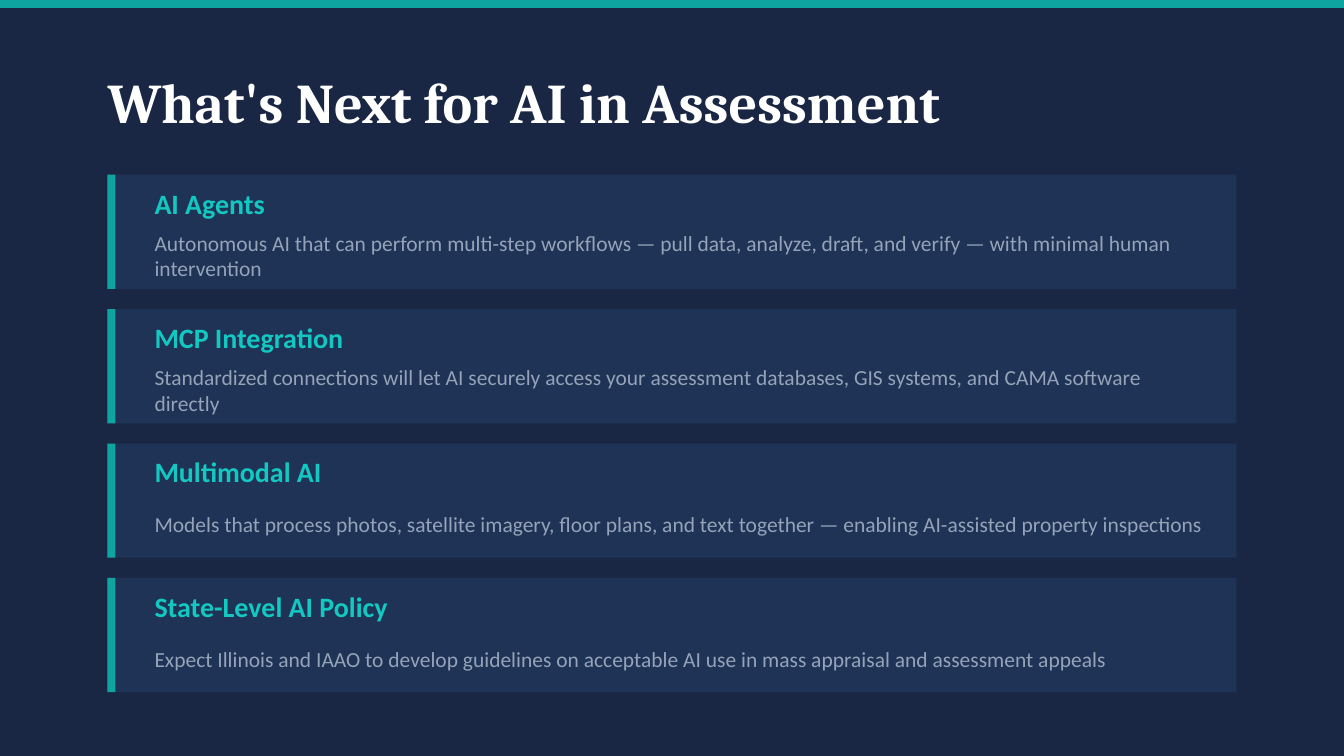
from dataclasses import dataclass

import pptx
import pptx.dml.color
import pptx.enum.shapes
import pptx.enum.text
import pptx.util

Pt = pptx.util.Pt

COLORS = {
    "background": "1A2744",
    "accent": "0EA5A0",
    "card": "1E3355",
    "title": "FFFFFF",
    "heading": "14C8C2",
    "description": "94A3B8",
}

FORMATS = {
    "title": {"name": "Cambria", "size": Pt(30), "bold": True},
    "heading": {"name": "Calibri", "size": Pt(15), "bold": True},
    "description": {"name": "Calibri", "size": Pt(11.5), "bold": False},
}

# Layout in points
SLIDE_WIDTH, SLIDE_HEIGHT = 720, 405
MARGIN = 57.6
CONTENT_WIDTH = SLIDE_WIDTH - 2 * MARGIN
CARDS_TOP, CARD_HEIGHT, CARD_PITCH = 93.6, 61.2, 72
ACCENT_THICKNESS = 4.32
TEXT_LEFT, TEXT_WIDTH = 82.8, 561.6


@dataclass
class Box:
    left: float
    top: float
    width: float
    height: float

    def lengths(self) -> tuple:
        return Pt(self.left), Pt(self.top), Pt(self.width), Pt(self.height)


@dataclass
class Trend:
    heading: str
    description: str


TRENDS = [
    Trend("AI Agents",
          "Autonomous AI that can perform multi-step workflows — pull data, "
          "analyze, draft, and verify — with minimal human intervention"),
    Trend("MCP Integration",
          "Standardized connections will let AI securely access your assessment "
          "databases, GIS systems, and CAMA software directly"),
    Trend("Multimodal AI",
          "Models that process photos, satellite imagery, floor plans, and text "
          "together — enabling AI-assisted property inspections"),
    Trend("State-Level AI Policy",
          "Expect Illinois and IAAO to develop guidelines on acceptable AI use "
          "in mass appraisal and assessment appeals"),
]


def color(role: str) -> pptx.dml.color.RGBColor:
    return pptx.dml.color.RGBColor.from_string(COLORS[role])


def draw_block(slide, box: Box, role: str) -> None:
    block = slide.shapes.add_shape(
        pptx.enum.shapes.MSO_SHAPE.RECTANGLE, *box.lengths())
    block.shadow.inherit = False
    block.fill.solid()
    block.fill.fore_color.rgb = color(role)
    block.line.fill.background()


def write_text(frame, text: str, role: str) -> None:
    frame_format = {
        "word_wrap": True,
        "auto_size": pptx.enum.text.MSO_AUTO_SIZE.NONE,
        "vertical_anchor": pptx.enum.text.MSO_ANCHOR.MIDDLE,
        "margin_left": 0,
        "margin_top": 0,
        "margin_right": 0,
        "margin_bottom": 0,
    }
    for attribute, value in frame_format.items():
        setattr(frame, attribute, value)
    paragraph = frame.paragraphs[0]
    paragraph.alignment = pptx.enum.text.PP_ALIGN.LEFT
    run = paragraph.add_run()
    run.text = text
    for attribute, value in FORMATS[role].items():
        setattr(run.font, attribute, value)
    run.font.color.rgb = color(role)


def draw_label(slide, box: Box, text: str, role: str) -> None:
    label = slide.shapes.add_textbox(*box.lengths())
    write_text(label.text_frame, text, role)


def draw_title(slide, box: Box, text: str) -> None:
    title = slide.shapes.title
    title.left, title.top, title.width, title.height = box.lengths()
    write_text(title.text_frame, text, "title")


def draw_trend(slide, trend: Trend, top: float) -> None:
    draw_block(slide, Box(MARGIN, top, CONTENT_WIDTH, CARD_HEIGHT), "card")
    draw_block(slide, Box(MARGIN, top, ACCENT_THICKNESS, CARD_HEIGHT), "accent")
    draw_label(slide, Box(TEXT_LEFT, top + 3.6, TEXT_WIDTH, 23.04),
               trend.heading, "heading")
    draw_label(slide, Box(TEXT_LEFT, top + 28.8, TEXT_WIDTH, 28.8),
               trend.description, "description")


def main() -> None:
    presentation = pptx.Presentation()
    presentation.slide_width = Pt(SLIDE_WIDTH)
    presentation.slide_height = Pt(SLIDE_HEIGHT)
    slide = presentation.slides.add_slide(presentation.slide_layouts[5])

    # Background, top band and title
    slide.background.fill.solid()
    slide.background.fill.fore_color.rgb = color("background")
    draw_block(slide, Box(0, 0, SLIDE_WIDTH, ACCENT_THICKNESS), "accent")
    draw_title(slide, Box(MARGIN, 28.8, CONTENT_WIDTH, 50.4),
               "What's Next for AI in Assessment")

    # Trend cards
    for row, trend in enumerate(TRENDS):
        draw_trend(slide, trend, CARDS_TOP + row * CARD_PITCH)

    presentation.save("out.pptx")


if __name__ == "__main__":
    main()
